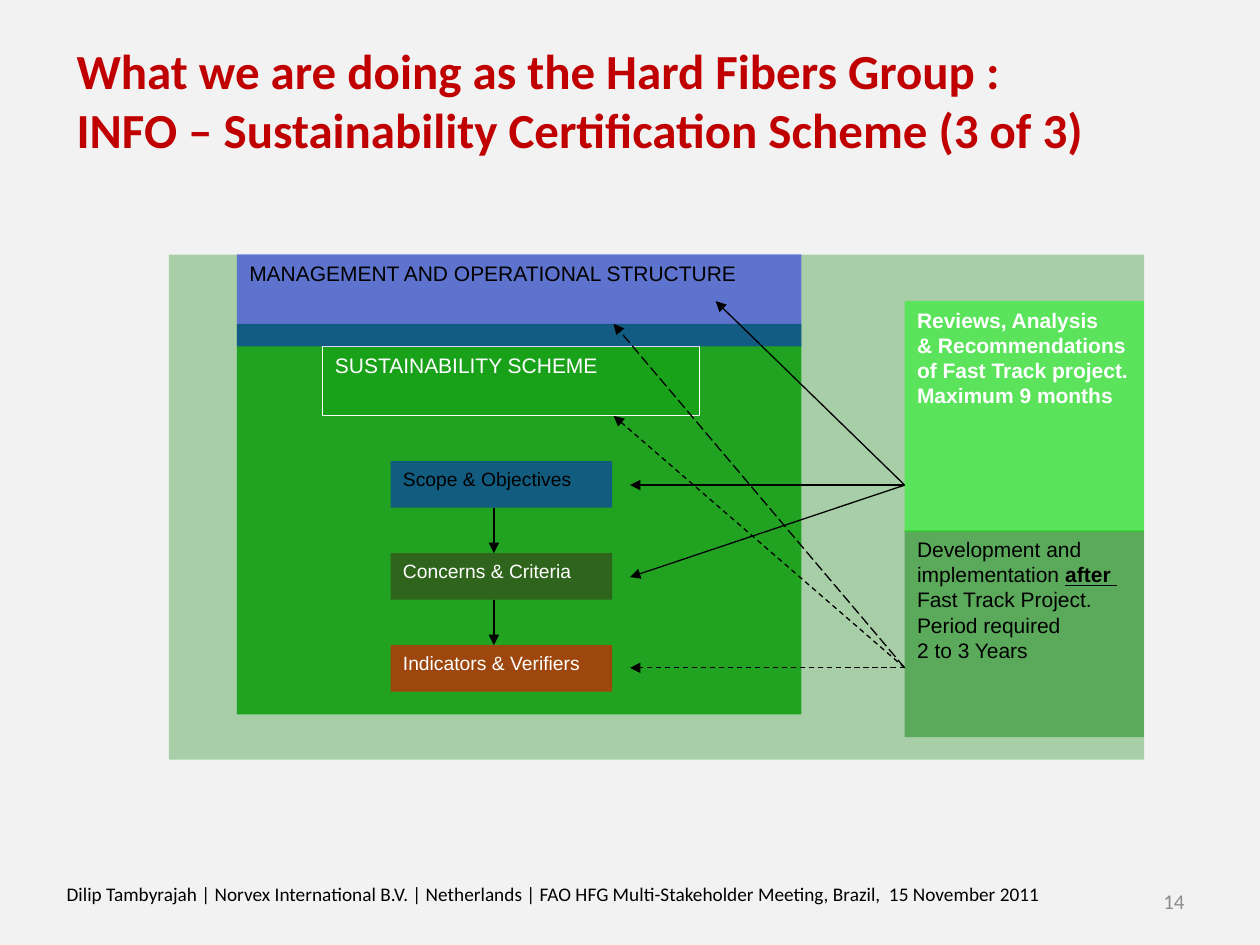
from dataclasses import dataclass

from lxml.etree import SubElement
from pptx import Presentation
from pptx.dml.color import RGBColor
from pptx.enum.dml import MSO_LINE
from pptx.enum.shapes import MSO_CONNECTOR, MSO_SHAPE
from pptx.enum.text import MSO_ANCHOR, PP_ALIGN
from pptx.oxml.ns import qn
from pptx.util import Inches, Pt


@dataclass(frozen=True)
class Theme:
    background: str = "F2F2F2"
    title: str = "C00000"
    page_number: str = "8C8C8C"
    black: str = "000000"
    white: str = "FFFFFF"
    forest: str = "008000"
    green: str = "009900"
    lime: str = "00FF00"
    blue: str = "0000FF"
    olive: str = "2F641C"
    red: str = "FF0000"
    heading_font: str = "Calibri"
    diagram_font: str = "Arial"
    title_size: int = 28
    label_size: int = 12
    small_size: int = 11
    line_width: float = 0.75


class SlideBuilder:
    def __init__(self, slide, theme):
        self.slide = slide
        self.theme = theme
        fill = slide.background.fill
        fill.solid()
        fill.fore_color.rgb = RGBColor.from_string(theme.background)

    def add_runs(self, shape, paragraphs, font, size, color, bold=False,
                 align=PP_ALIGN.LEFT, anchor=MSO_ANCHOR.TOP):
        frame = shape.text_frame
        frame.word_wrap = True
        frame.vertical_anchor = anchor
        for index, runs in enumerate(paragraphs):
            paragraph = frame.paragraphs[0] if index == 0 else frame.add_paragraph()
            paragraph.alignment = align
            for text, emphasis in runs:
                if text == "\n":
                    paragraph.add_line_break()
                    continue
                run = paragraph.add_run()
                run.text = text
                run.font.name = font
                run.font.size = Pt(size)
                run.font.bold = bold or emphasis
                run.font.underline = emphasis
                run.font.color.rgb = RGBColor.from_string(color)

    def text(self, box, runs, size, color, **style):
        shape = self.slide.shapes.add_textbox(*map(Inches, box))
        self.add_runs(shape, [plain(*runs)], self.theme.heading_font, size, color, **style)

    def rectangle(self, box, color, opacity=100, outline=None, paragraphs=(),
                  size=None, text_color=None, bold=False):
        shape = self.slide.shapes.add_shape(MSO_SHAPE.RECTANGLE, *map(Inches, box))
        shape.shadow.inherit = False
        shape.fill.solid()
        shape.fill.fore_color.rgb = RGBColor.from_string(color)
        if opacity < 100:
            color_element = shape._element.spPr.find(qn("a:solidFill"))[0]
            SubElement(color_element, qn("a:alpha"), val=str(opacity * 1000))
        if outline:
            shape.line.color.rgb = RGBColor.from_string(outline)
            shape.line.width = Pt(self.theme.line_width)
        else:
            shape.line.fill.background()
        if paragraphs:
            self.add_runs(shape, paragraphs, self.theme.diagram_font,
                          size or self.theme.label_size, text_color, bold)

    def arrow(self, start, end, dash=None):
        connector = self.slide.shapes.add_connector(
            MSO_CONNECTOR.STRAIGHT, *map(Inches, start + end))
        connector.line.color.rgb = RGBColor.from_string(self.theme.black)
        connector.line.width = Pt(self.theme.line_width)
        if dash:
            connector.line.dash_style = dash
        properties = connector._element.spPr
        SubElement(properties.find(qn("a:ln")), qn("a:tailEnd"), type="triangle")
        SubElement(properties, qn("a:effectLst"))


def plain(*texts):
    return [(text, False) for text in texts]


def main():
    presentation = Presentation()
    presentation.slide_width = Inches(10)
    presentation.slide_height = Inches(7.5)
    slide = presentation.slides.add_slide(presentation.slide_layouts[6])
    theme = Theme()
    builder = SlideBuilder(slide, theme)

    builder.text((8.62, 6.95, 0.88, 0.4), ["14"], theme.label_size, theme.page_number,
                 align=PP_ALIGN.RIGHT, anchor=MSO_ANCHOR.MIDDLE)
    builder.text((0.43, 6.95, 8.11, 0.4),
                 ["Dilip Tambyrajah | Norvex International B.V. | Netherlands | "
                  "FAO HFG Multi-Stakeholder Meeting, Brazil,  15 November 2011"],
                 theme.small_size, theme.black)

    builder.rectangle((1.34, 2.02, 7.74, 4.01), theme.forest, 31)
    builder.rectangle((1.88, 2.57, 4.48, 3.1), theme.green, 80)

    step_top, step_pitch, step_height = 3.66, 0.73, 0.37
    steps = [
        ("Scope & Objectives", theme.blue, 43, theme.black),
        ("Concerns & Criteria", theme.olive, 100, theme.white),
        ("Indicators & Verifiers", theme.red, 56, theme.white),
    ]
    for index, (label, color, opacity, text_color) in enumerate(steps):
        top = step_top + index * step_pitch
        builder.rectangle((3.1, top, 1.76, step_height), color, opacity,
                          paragraphs=[plain(label)], size=theme.small_size,
                          text_color=text_color)

    builder.rectangle((2.56, 2.75, 2.99, 0.55), theme.green, 19, theme.white,
                      [plain("SUSTAINABILITY SCHEME")], text_color=theme.white)

    for index in range(len(steps) - 1):
        top = step_top + index * step_pitch
        builder.arrow((3.92, top + step_height), (3.92, top + step_pitch))

    builder.rectangle((1.88, 2.02, 4.48, 0.73), theme.blue, 44,
                      paragraphs=[plain("MANAGEMENT AND OPERATIONAL STRUCTURE")],
                      text_color=theme.black)

    review_start = (7.18, 3.85)
    for end in [(5.68, 2.39), (5, 3.85), (5, 4.58)]:
        builder.arrow(review_start, end)

    builder.rectangle((7.18, 4.21, 1.9, 1.64), theme.forest, 45, paragraphs=[
        [("Development and implementation ", False), ("after ", True)],
        plain("Fast Track Project."),
        plain("Period required"),
        plain("2 to 3 Years"),
    ], text_color=theme.black)
    builder.rectangle((7.18, 2.39, 1.9, 1.83), theme.lime, 45, paragraphs=[
        plain("Reviews, Analysis"),
        plain("& Recommendations of Fast Track project."),
        plain("Maximum 9 months"),
    ], text_color=theme.white, bold=True)

    development_start = (7.18, 5.3)
    for end, dash in [((5, 5.3), MSO_LINE.DASH),
                      ((4.87, 2.57), MSO_LINE.LONG_DASH),
                      ((4.87, 3.3), MSO_LINE.DASH)]:
        builder.arrow(development_start, end, dash)

    builder.text((0.51, 0.2, 9.19, 1.18),
                 ["What we are doing as the Hard Fibers Group :", "\n",
                  "INFO – Sustainability Certification Scheme (3 of 3)"],
                 theme.title_size, theme.title, bold=True, anchor=MSO_ANCHOR.MIDDLE)

    presentation.save("out.pptx")


if __name__ == "__main__":
    main()
